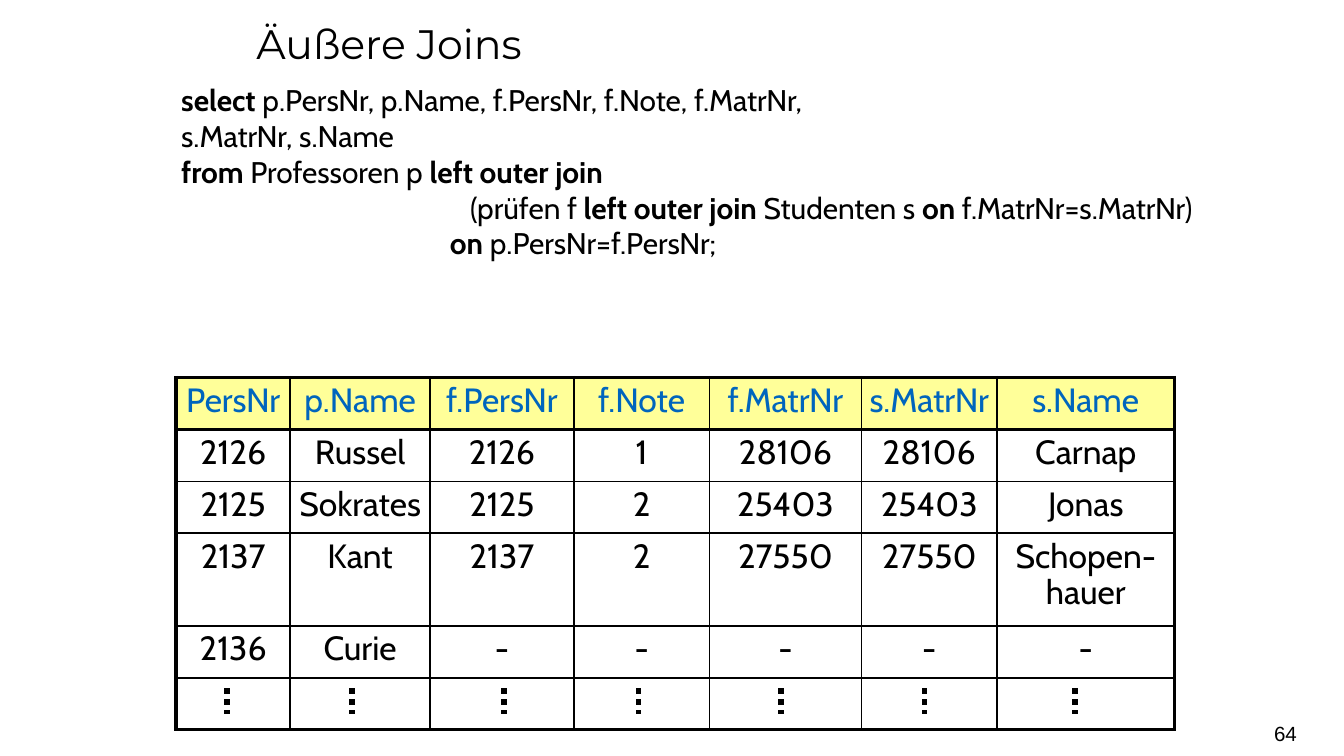
from typing import NamedTuple

from lxml import etree
from pptx import Presentation
from pptx.dml.color import RGBColor
from pptx.enum.dml import MSO_LINE
from pptx.enum.shapes import MSO_CONNECTOR
from pptx.enum.text import MSO_ANCHOR, PP_ALIGN
from pptx.oxml.ns import qn
from pptx.util import Inches, Pt

CENTER, RIGHT = PP_ALIGN.CENTER, PP_ALIGN.RIGHT
MIDDLE = MSO_ANCHOR.MIDDLE
STRAIGHT = MSO_CONNECTOR.STRAIGHT
DOTTED = MSO_LINE.ROUND_DOT

BLACK, BLUE, YELLOW = "000000", "0065BD", "FFFF99"
THIN, THICK = 1, 2.25


class Span(NamedTuple):
    text: str
    bold: bool = False


class QueryLine(NamedTuple):
    spans: list[Span]
    indent: float = 0


QUERY = [
    QueryLine([Span("select ", True),
               Span("p.PersNr, p.Name, f.PersNr, f.Note, f.MatrNr,")]),
    QueryLine([Span("s.MatrNr, s.Name")]),
    QueryLine([Span("from", True), Span(" Professoren p "),
               Span("left outer join", True)]),
    QueryLine([Span("(prüfen f "), Span("left outer join ", True),
               Span("Studenten s "), Span("on ", True),
               Span("f.MatrNr=s.MatrNr)")], 2.15),
    QueryLine([Span("on ", True), Span("p.PersNr=f.PersNr;")], 2),
]

RESULT = [
    ["PersNr", "p.Name", "f.PersNr", "f.Note", "f.MatrNr", "s.MatrNr", "s.Name"],
    ["2126", "Russel", "2126", "1", "28106", "28106", "Carnap"],
    ["2125", "Sokrates", "2125", "2", "25403", "25403", "Jonas"],
    ["2137", "Kant", "2137", "2", "27550", "27550", "Schopen-hauer"],
    ["2136", "Curie", "-", "-", "-", "-", "-"],
    [""] * 7,
]
COLUMN_WIDTHS = [0.85, 1.04, 1.07, 1.01, 1.13, 1.01, 1.32]
TABLE_HEIGHT, TALL_ROW, TALL_HEIGHT = 2.62, 3, 0.69
ROW_HEIGHT = (TABLE_HEIGHT - TALL_HEIGHT) / (len(RESULT) - 1)
ELLIPSIS_CENTERS = [1.69, 2.62, 3.75, 4.75, 5.81, 6.88, 8]


def color(value: str) -> RGBColor:
    return RGBColor.from_string(value)


def style(font, name: str, size: float, value: str = BLACK, bold: bool = False) -> None:
    font.name, font.size, font.bold = name, Pt(size), bold
    font.color.rgb = color(value)


def add_box(page, left: float, top: float, width: float, height: float):
    box = page.shapes.add_textbox(Inches(left), Inches(top), Inches(width), Inches(height))
    box.text_frame.word_wrap = True
    return box


def add_title(page) -> None:
    paragraph = add_box(page, 1.81, 0, 6.38, 0.69).text_frame.paragraphs[0]
    paragraph.text = "Äußere Joins"
    paragraph.line_spacing = 1.25
    style(paragraph.runs[0].font, "Montserrat", 22)


def add_query(page) -> None:
    frame = add_box(page, 1.25, 0.56, 8.5, 4.75).text_frame
    for number, line in enumerate(QUERY):
        paragraph = frame.add_paragraph() if number else frame.paragraphs[0]
        if line.indent:
            paragraph._p.get_or_add_pPr().set("marL", str(Inches(line.indent)))
        for span in line.spans:
            run = paragraph.add_run()
            run.text = span.text
            style(run.font, "Cabin", 16, bold=span.bold)


def set_border(cell, side: str, width: float) -> None:
    """Draw one side of a cell in black; side is L, R, T or B."""
    line = etree.SubElement(cell._tc.get_or_add_tcPr(), qn(f"a:ln{side}"), w=str(Pt(width)))
    fill = etree.SubElement(line, qn("a:solidFill"))
    etree.SubElement(fill, qn("a:srgbClr"), val=BLACK)


def add_result(page) -> None:
    last_row, last_column = len(RESULT) - 1, len(COLUMN_WIDTHS) - 1
    table = page.shapes.add_table(
        len(RESULT), len(COLUMN_WIDTHS), Inches(1.31), Inches(2.81),
        Inches(sum(COLUMN_WIDTHS)), Inches(TABLE_HEIGHT)).table
    table.first_row = table.horz_banding = False
    for column, width in zip(table.columns, COLUMN_WIDTHS):
        column.width = Inches(width)

    for row, values in enumerate(RESULT):
        table.rows[row].height = Inches(TALL_HEIGHT if row == TALL_ROW else ROW_HEIGHT)
        for column, value in enumerate(values):
            cell = table.cell(row, column)
            cell.margin_left = cell.margin_right = 0
            cell.margin_top = cell.margin_bottom = Inches(0.04)
            thick_sides = {"L": column == 0, "R": column == last_column,
                           "T": row <= 1, "B": row in (0, last_row)}
            for side, thick in thick_sides.items():
                set_border(cell, side, THICK if thick else THIN)
            if row == 0:
                cell.fill.solid()
                cell.fill.fore_color.rgb = color(YELLOW)
            else:
                cell.fill.background()
            if value:
                paragraph = cell.text_frame.paragraphs[0]
                paragraph.text = value
                paragraph.alignment = CENTER
                paragraph.line_spacing = 0.9
                style(paragraph.runs[0].font, "Cabin", 18, BLACK if row else BLUE)


def add_ellipsis(page, center: float) -> None:
    """Draw a vertical row of dots for the omitted table rows."""
    dots = page.shapes.add_connector(
        STRAIGHT, Inches(center), Inches(5.12), Inches(center), Inches(5.31))
    dots.line.color.rgb = color(BLACK)
    dots.line.width = Pt(3)
    dots.line.dash_style = DOTTED
    etree.SubElement(dots._element.spPr, qn("a:effectLst"))


def add_page_number(page) -> None:
    frame = add_box(page, 7.41, 5.31, 2.24, 0.3).text_frame
    frame.margin_left = frame.margin_right = 0
    frame.vertical_anchor = MIDDLE
    paragraph = frame.paragraphs[0]
    paragraph.text = "64"
    paragraph.alignment = RIGHT
    style(paragraph.runs[0].font, "Arial", 11)


def main() -> None:
    deck = Presentation()
    deck.slide_width, deck.slide_height = Inches(10), Inches(10 * 9 / 16)
    page = deck.slides.add_slide(deck.slide_layouts[6])
    add_title(page)
    add_query(page)
    add_result(page)
    for center in ELLIPSIS_CENTERS:
        add_ellipsis(page, center)
    add_page_number(page)
    deck.save("out.pptx")


if __name__ == "__main__":
    main()
